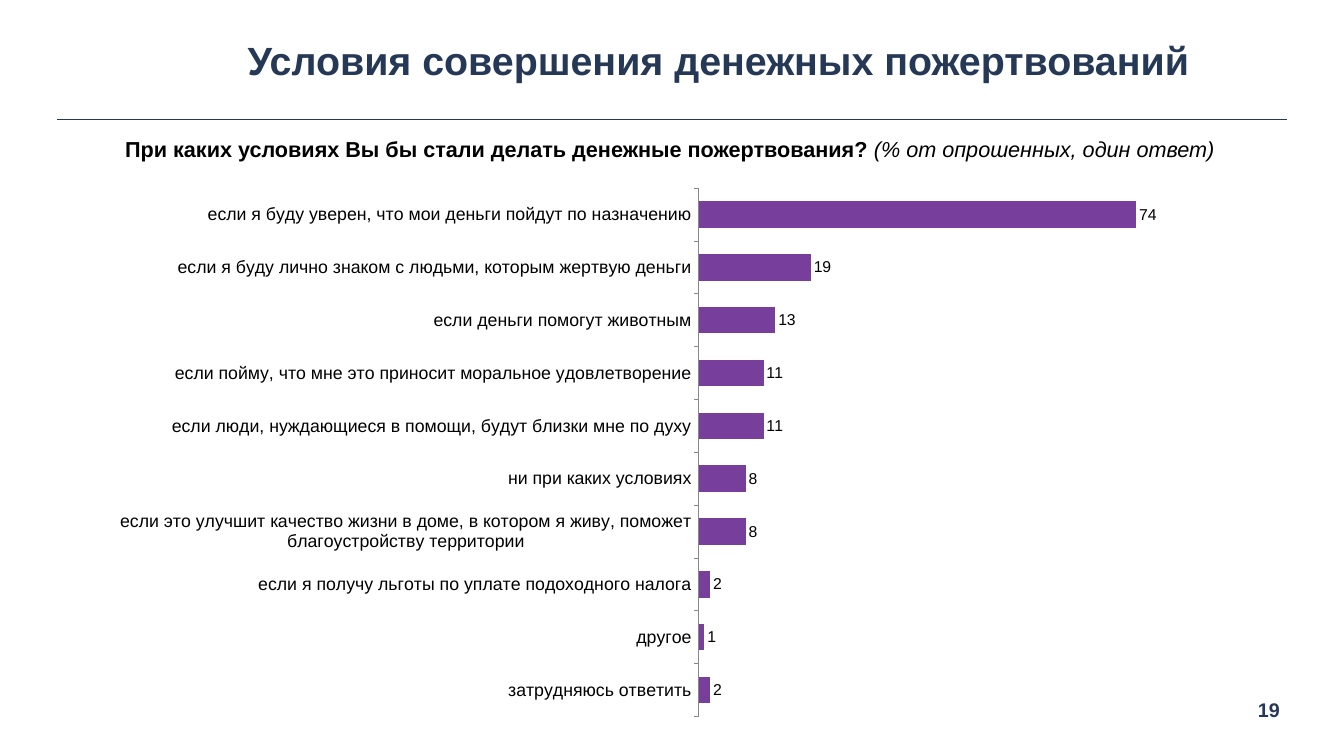
from lxml.etree import SubElement
from pptx import Presentation
from pptx.chart.data import CategoryChartData
from pptx.dml.color import RGBColor
from pptx.enum.chart import XL_CHART_TYPE, XL_LABEL_POSITION, XL_TICK_MARK
from pptx.enum.shapes import MSO_CONNECTOR
from pptx.enum.text import MSO_ANCHOR, PP_ALIGN
from pptx.oxml.ns import qn
from pptx.util import Inches, Pt

NAVY = "253957"
BLACK = "000000"
PURPLE = "773F9B"
GREY = "888888"


def style_font(font, size, color=BLACK, bold=False, italic=False):
    font.name = "Arial"
    font.size = Pt(size)
    font.bold = bold
    font.italic = italic
    font.color.rgb = RGBColor.from_string(color)


def add_text(spans, left, top, width, height, size, color=BLACK,
             anchor=MSO_ANCHOR.TOP, wrap=True):
    box = page.shapes.add_textbox(Inches(left), Inches(top), Inches(width), Inches(height))
    frame = box.text_frame
    frame.word_wrap = wrap
    frame.vertical_anchor = anchor
    frame.margin_left = frame.margin_right = Inches(0.09)
    frame.margin_top = frame.margin_bottom = Inches(0.09)
    para = frame.paragraphs[0]
    para.alignment = PP_ALIGN.CENTER
    for text, emphasis in spans:
        span = para.add_run()
        span.text = text
        style_font(span.font, size, color, **emphasis)


deck = Presentation()
deck.slide_width = Inches(18.96)
deck.slide_height = Inches(10.67)
page = deck.slides.add_slide(deck.slide_layouts[6])

rule = page.shapes.add_connector(
    MSO_CONNECTOR.STRAIGHT, Inches(0.81), Inches(1.69), Inches(18.16), Inches(1.69))
rule.line.color.rgb = RGBColor.from_string(NAVY)
rule.line.width = Pt(1)
SubElement(rule._element.spPr, qn("a:effectLst"))

add_text([("19", {"bold": True})], 17.64, 9.76, 0.52, 0.52, size=20, color=NAVY, wrap=False)
add_text([("Условия совершения денежных пожертвований", {"bold": True})],
         2.15, 0.32, 15.97, 1.06, size=40, color=NAVY, anchor=MSO_ANCHOR.MIDDLE)
add_text([("При каких условиях Вы бы стали делать денежные пожертвования? ", {"bold": True}),
          ("(% от опрошенных, один ответ)", {"italic": True})],
         1.6, 1.83, 15.7, 0.58, size=22)

answers = [
    ("затрудняюсь ответить", 2),
    ("другое", 1),
    ("если я получу льготы по уплате подоходного налога", 2),
    ("если это улучшит качество жизни в доме, в котором я живу, "
     "поможет благоустройству территории", 8),
    ("ни при каких условиях", 8),
    ("если люди, нуждающиеся в помощи, будут близки мне по духу", 11),
    ("если пойму, что мне это приносит моральное удовлетворение", 11),
    ("если деньги помогут животным", 13),
    ("если я буду лично знаком с людьми, которым жертвую деньги", 19),
    ("если я буду уверен, что мои деньги пойдут по назначению", 74),
]
data = CategoryChartData()
data.categories = [answer for answer, share in answers]
data.add_series("Доля, %", [share for answer, share in answers])
chart = page.shapes.add_chart(
    XL_CHART_TYPE.BAR_CLUSTERED, Inches(1.66), Inches(2.41), Inches(15.64), Inches(7.71),
    data).chart
chart.has_legend = False
chart.has_title = False
style_font(chart.font, 18)

answer_axis = chart.category_axis
answer_axis.major_tick_mark = XL_TICK_MARK.OUTSIDE
answer_axis.has_major_gridlines = False
answer_axis.format.line.color.rgb = RGBColor.from_string(GREY)
answer_axis.format.line.width = Pt(0.75)
style_font(answer_axis.tick_labels.font, 18)

share_axis = chart.value_axis
share_axis.minimum_scale = 0
share_axis.maximum_scale = 80
share_axis.has_major_gridlines = False
share_axis.visible = False

plot = chart.plots[0]
plot.gap_width = 100
plot.vary_by_categories = False
bars = plot.series[0]
bars.format.fill.solid()
bars.format.fill.fore_color.rgb = RGBColor.from_string(PURPLE)
labels = bars.data_labels
labels.show_value = True
labels.position = XL_LABEL_POSITION.OUTSIDE_END
style_font(labels.font, 16)

plot_area = chart._chartSpace.chart.plotArea
layout = plot_area.find(qn("c:layout"))
if layout is None:
    layout = SubElement(plot_area, qn("c:layout"))
    plot_area.insert(0, layout)
manual = SubElement(layout, qn("c:manualLayout"))
for tag, value in [("layoutTarget", "inner"), ("xMode", "edge"), ("yMode", "edge"),
                   ("x", "0.524"), ("y", "0.032"), ("w", "0.427"), ("h", "0.967")]:
    SubElement(manual, qn(f"c:{tag}")).set("val", value)

deck.save("out.pptx")
